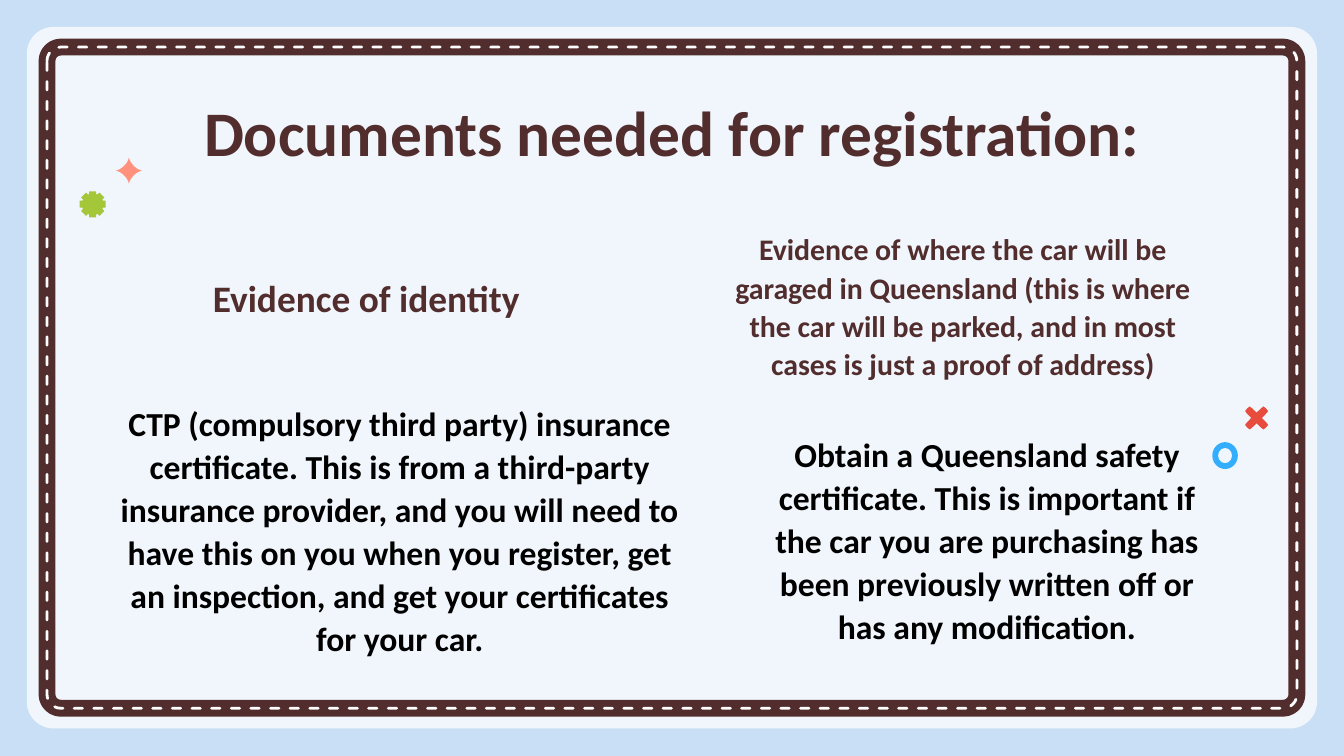
from math import atan2, cos, degrees, hypot, radians, sin

from lxml import etree
from pptx import Presentation
from pptx.dml.color import RGBColor
from pptx.enum.dml import MSO_LINE
from pptx.enum.shapes import MSO_SHAPE
from pptx.enum.text import MSO_ANCHOR, PP_ALIGN
from pptx.oxml.ns import qn
from pptx.util import Inches, Pt

ROUND_RECT, DONUT = MSO_SHAPE.ROUNDED_RECTANGLE, MSO_SHAPE.DONUT
TOP, BOTTOM = MSO_ANCHOR.TOP, MSO_ANCHOR.BOTTOM
CENTER = PP_ALIGN.CENTER
DASH = MSO_LINE.DASH

SKY = RGBColor(0xC9, 0xDF, 0xF5)
WHITE = RGBColor(0xFF, 0xFF, 0xFF)
BLACK = RGBColor(0, 0, 0)
BROWN = RGBColor(0x52, 0x2D, 0x2D)
CORAL = RGBColor(0xFF, 0x91, 0x7D)
GREEN = RGBColor(0xA4, 0xC6, 0x39)
RED = RGBColor(0xE8, 0x4C, 0x3D)
BLUE = RGBColor(0x33, 0xAE, 0xFF)

prs = Presentation()
prs.slide_width = Inches(10)
prs.slide_height = Inches(10) * 9 // 16
s = prs.slides.add_slide(prs.slide_layouts[6])
s.background.fill.solid()
s.background.fill.fore_color.rgb = SKY


def add_text(text, x, y, w, h, size=18, color=BLACK, anchor=BOTTOM,
             spacing=1.07, after=8):
    tf = s.shapes.add_textbox(Inches(x), Inches(y), Inches(w), Inches(h)).text_frame
    tf.word_wrap = True
    tf.vertical_anchor = anchor
    tf.margin_left = tf.margin_right = Inches(0.1)
    tf.margin_top = tf.margin_bottom = Inches(0.1)
    p = tf.paragraphs[0]
    p.alignment = CENTER
    p.line_spacing = spacing
    p.space_after = Pt(after)
    r = p.add_run()
    r.text = text
    r.font.name = "Calibri"
    r.font.size = Pt(size)
    r.font.bold = True
    r.font.color.rgb = color


def add_radial(cx, cy, color, arms, profile, start=0):
    """Draw an outline that repeats (degrees, radius) points once per arm."""
    points = []
    for arm in range(arms):
        for angle, radius in profile:
            a = radians(start + arm * 360 / arms + angle)
            points.append((Inches(cx + radius * cos(a)), Inches(cy + radius * sin(a))))
    builder = s.shapes.build_freeform(*points[0])
    builder.add_line_segments(points[1:], close=True)
    sp = builder.convert_to_shape()
    sp.shadow.inherit = False
    sp.fill.solid()
    sp.fill.fore_color.rgb = color
    sp.line.fill.background()


# Card and stitched border
card = s.shapes.add_shape(ROUND_RECT, Inches(0.2), Inches(0.2), Inches(9.6), Inches(5.22))
card.adjustments[0] = 0.038
card.shadow.inherit = False
card.fill.solid()
card.fill.fore_color.rgb = WHITE
card.line.fill.background()
srgb = card.fill._xPr.find(qn("a:solidFill")).find(qn("a:srgbClr"))
etree.SubElement(srgb, qn("a:alpha"), val="75000")

for color, width, dash in [(BROWN, 9, None), (WHITE, 1.5, DASH)]:
    border = s.shapes.add_shape(ROUND_RECT, Inches(0.35), Inches(0.35),
                                Inches(9.3), Inches(4.92))
    border.adjustments[0] = 0.021
    border.shadow.inherit = False
    border.fill.background()
    border.line.color.rgb = color
    border.line.width = Pt(width)
    border.line.dash_style = dash
    border.line._get_or_add_ln().set("cap", "rnd")

# Title and the four documents
add_text("Documents needed for registration:", 0.78, 0.59, 8.44, 0.58,
         size=34, color=BROWN, anchor=TOP, spacing=1, after=0)
add_text("Evidence of identity", 1.45, 1.98, 2.55, 0.5,
         size=20, color=BROWN, spacing=1, after=0)
add_text("Evidence of where the car will be garaged in Queensland (this is where "
         "the car will be parked, and in most cases is just a proof of address)",
         5.22, 1.51, 3.89, 1.43, size=16, color=BROWN)
add_text("CTP (compulsory third party) insurance certificate. This is from a "
         "third-party insurance provider, and you will need to have this on you "
         "when you register, get an inspection, and get your certificates for "
         "your car.", 0.73, 2.69, 4.49, 2.31)
add_text("Obtain a Queensland safety certificate. This is important if the car you "
         "are purchasing has been previously written off or has any modification.",
         5.58, 3.03, 3.53, 1.88)

# Small ornaments
astroid = [(cos(radians(t)) ** 3, sin(radians(t)) ** 3) for t in range(0, 90, 10)]
sparkle = [(degrees(atan2(y, x)), 0.1 * hypot(x, y)) for x, y in astroid]
add_radial(0.96, 1.27, CORAL, 4, sparkle)
add_radial(0.69, 1.52, GREEN, 8, [(-15, 0.1), (15, 0.1), (19, 0.08), (26, 0.08)])
add_radial(9.35, 3.11, RED, 4,
           [(-20, 0.08), (-14, 0.1), (0, 0.1), (14, 0.1), (20, 0.08), (45, 0.04)],
           start=45)

ring = s.shapes.add_shape(DONUT, Inches(9.02), Inches(3.29), Inches(0.19), Inches(0.2))
ring.adjustments[0] = 0.225
ring.shadow.inherit = False
ring.fill.solid()
ring.fill.fore_color.rgb = BLUE
ring.line.fill.background()

prs.save("out.pptx")
